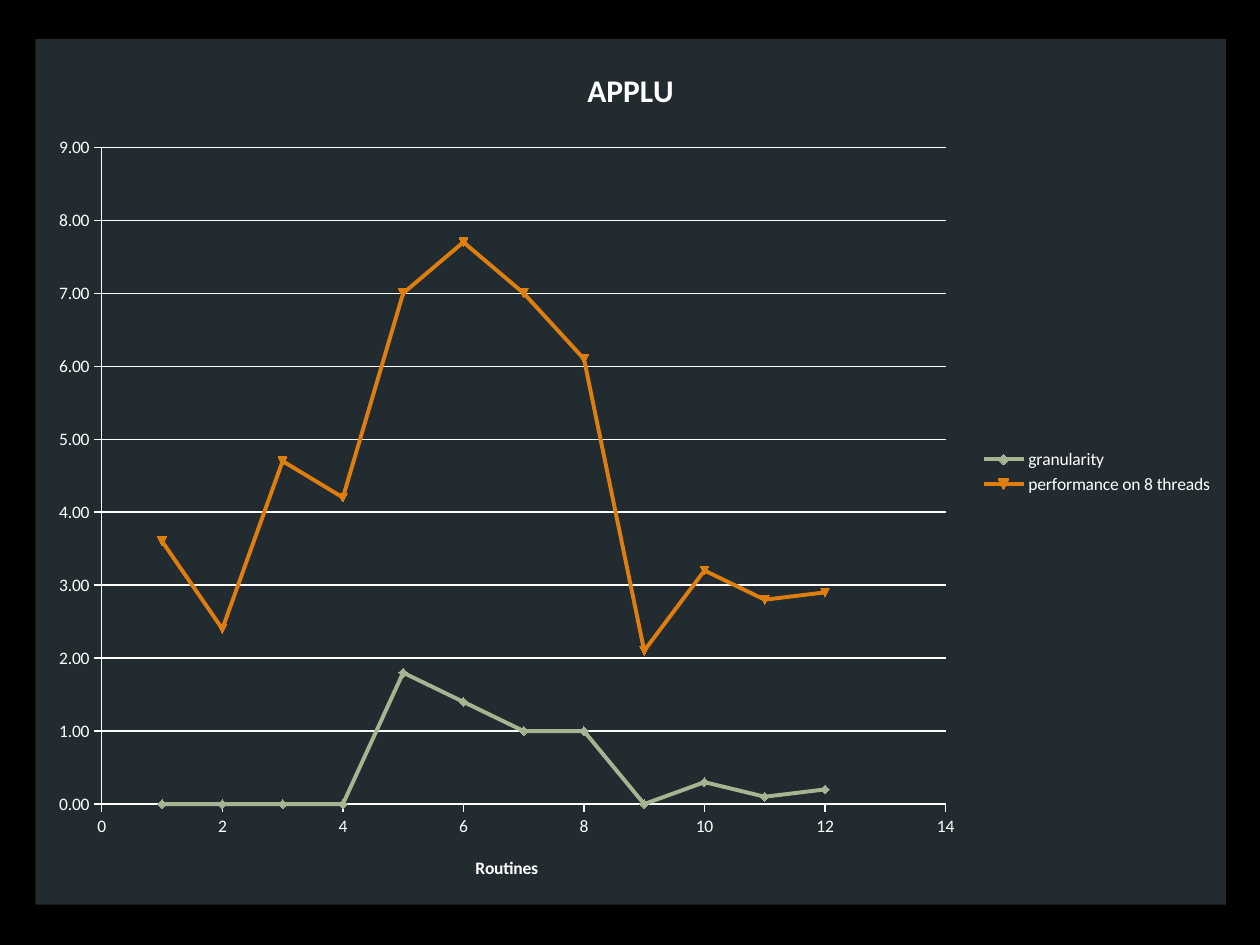
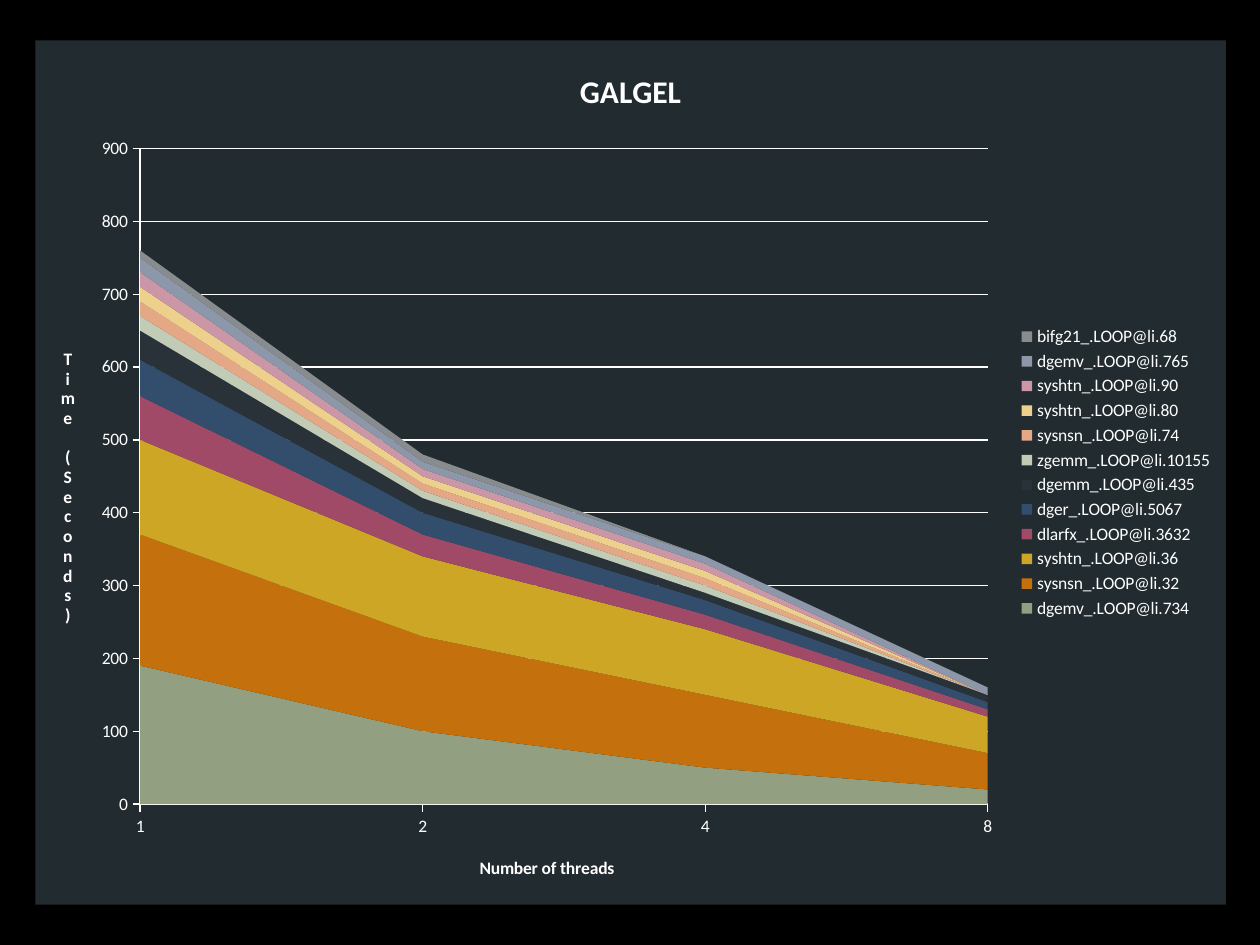
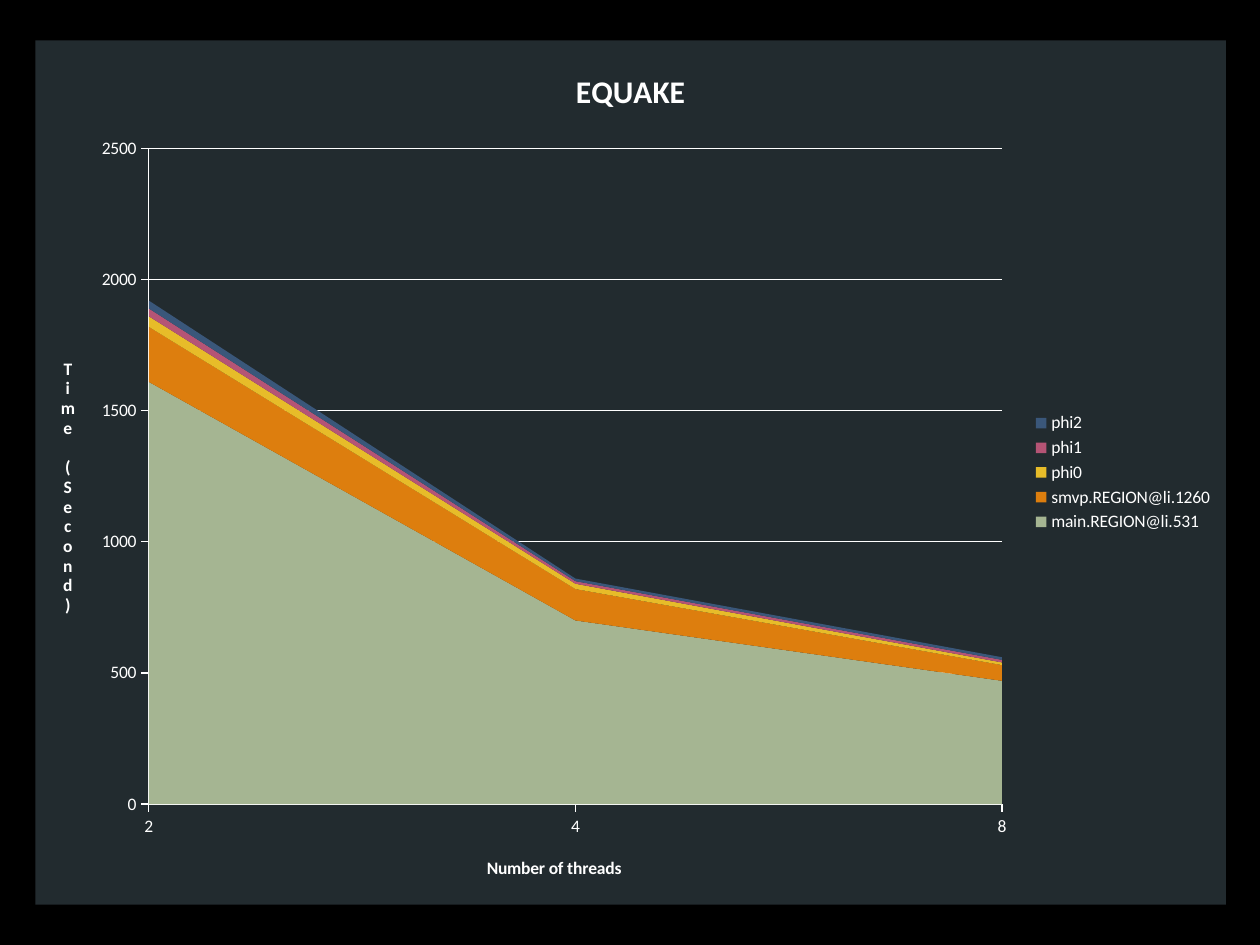
from lxml import etree
from pptx import Presentation
from pptx.chart.data import CategoryChartData, XyChartData
from pptx.dml.color import RGBColor
from pptx.enum.chart import XL_CHART_TYPE, XL_LEGEND_POSITION, XL_TICK_MARK
from pptx.oxml import parse_xml
from pptx.oxml.ns import nsdecls, qn
from pptx.util import Inches, Pt

BLACK = RGBColor(0x00, 0x00, 0x00)
WHITE = RGBColor(0xFF, 0xFF, 0xFF)
PANEL = RGBColor(0x22, 0x2B, 0x2F)
ACCENTS = [
    RGBColor(0xA5, 0xB5, 0x92),
    RGBColor(0xDD, 0x7E, 0x0E),
    RGBColor(0xE7, 0xBC, 0x29),
    RGBColor(0xB5, 0x54, 0x75),
    RGBColor(0x3A, 0x57, 0x7A),
]
DARK_ACCENTS = [
    RGBColor(0x92, 0xA0, 0x81),
    RGBColor(0xC4, 0x70, 0x0C),
    RGBColor(0xCC, 0xA6, 0x24),
    RGBColor(0xA0, 0x4A, 0x67),
    RGBColor(0x33, 0x4D, 0x6C),
    RGBColor(0x28, 0x32, 0x38),
]
LIGHT_ACCENTS = [
    RGBColor(0xC1, 0xCB, 0xB6),
    RGBColor(0xE5, 0xA8, 0x87),
    RGBColor(0xED, 0xD0, 0x8B),
    RGBColor(0xCB, 0x96, 0xA5),
    RGBColor(0x8C, 0x98, 0xA9),
    RGBColor(0x88, 0x8C, 0x8E),
]

# Measured values
APPLU = {
    "granularity": [0, 0, 0, 0, 1.8, 1.4, 1, 1, 0, 0.3, 0.1, 0.2],
    "performance on 8 threads": [3.6, 2.4, 4.7, 4.2, 7, 7.7, 7, 6.1, 2.1, 3.2, 2.8, 2.9],
}
GALGEL = {
    "dgemv_.LOOP@li.734": [190, 100, 50, 20],
    "sysnsn_.LOOP@li.32": [180, 130, 100, 50],
    "syshtn_.LOOP@li.36": [130, 110, 90, 50],
    "dlarfx_.LOOP@li.3632": [60, 30, 20, 10],
    "dger_.LOOP@li.5067": [50, 30, 20, 10],
    "dgemm_.LOOP@li.435": [40, 20, 10, 10],
    "zgemm_.LOOP@li.10155": [20, 10, 10, 0],
    "sysnsn_.LOOP@li.74": [20, 10, 10, 0],
    "syshtn_.LOOP@li.80": [20, 10, 10, 0],
    "syshtn_.LOOP@li.90": [20, 10, 10, 0],
    "dgemv_.LOOP@li.765": [20, 10, 10, 10],
    "bifg21_.LOOP@li.68": [10, 10, 0, 0],
}
EQUAKE = {
    "main.REGION@li.531": [1610, 700, 470],
    "smvp.REGION@li.1260": [210, 120, 60],
    "phi0": [40, 20, 10],
    "phi1": [30, 10, 10],
    "phi2": [30, 10, 10],
}


class ChartDeck:
    """Holds the shared chart style and the current slide."""

    font = "Calibri"
    text_size = Pt(10)
    title_size = Pt(18)
    rule_width = Pt(0.75)
    panel_bottom = Inches(7.18)

    def __init__(self):
        self.deck = Presentation()
        self.deck.slide_width = Inches(10)
        self.deck.slide_height = Inches(7.5)
        self.page = None

    def new_page(self):
        self.page = self.deck.slides.add_slide(self.deck.slide_layouts[6])
        fill = self.page.background.fill
        fill.solid()
        fill.fore_color.rgb = BLACK

    def style_font(self, font, size, bold=False):
        font.name = self.font
        font.size = size
        font.bold = bold
        font.color.rgb = WHITE

    def title(self, target, text, size):
        span = target.text_frame.paragraphs[0].add_run()
        span.text = text
        self.style_font(span.font, size, bold=True)

    def scale(self, axis, top, step):
        axis.minimum_scale, axis.maximum_scale, axis.major_unit = 0, top, step

    def axis(self, axis, name, number_format="General"):
        axis.major_tick_mark = XL_TICK_MARK.OUTSIDE
        axis.minor_tick_mark = XL_TICK_MARK.NONE
        axis.tick_labels.number_format = number_format
        axis.tick_labels.number_format_is_linked = False
        self.style_font(axis.tick_labels.font, self.text_size)
        self.rule(axis.format.line)
        if name:
            self.title(axis.axis_title, name, self.text_size)

    def rule(self, line):
        line.color.rgb = WHITE
        line.width = self.rule_width

    def stack_letters(self, axis):
        body = axis.axis_title.text_frame._txBody.find(qn("a:bodyPr"))
        body.set("rot", "0")
        body.set("vert", "wordArtVert")

    def panel(self, chart):
        properties = parse_xml(
            f'<c:spPr {nsdecls("c", "a")}><a:solidFill><a:srgbClr val="{PANEL}"/>'
            "</a:solidFill><a:ln><a:noFill/></a:ln></c:spPr>"
        )
        chart._chartSpace.find(qn("c:chart")).addnext(properties)

    def chart(self, kind, data, name, top):
        frame = self.page.shapes.add_chart(
            kind, Inches(0.28), top, Inches(9.45), self.panel_bottom - top, data
        )
        chart = frame.chart
        self.style_font(chart.font, self.text_size)
        self.panel(chart)
        chart.has_title = True
        self.title(chart.chart_title, name, self.title_size)
        chart.has_legend = True
        chart.legend.position = XL_LEGEND_POSITION.RIGHT
        chart.legend.include_in_layout = False
        self.style_font(chart.legend.font, self.text_size)
        chart.plots[0].vary_by_categories = False
        chart.category_axis.has_major_gridlines = False
        chart.value_axis.has_major_gridlines = True
        self.rule(chart.value_axis.major_gridlines.format.line)
        return chart

    def scatter_chart(self, name, table, colors):
        data = XyChartData()
        for label, values in table.items():
            series = data.add_series(label)
            for routine, value in enumerate(values, start=1):
                series.add_data_point(routine, value)
        chart = self.chart(XL_CHART_TYPE.XY_SCATTER_LINES, data, name, Inches(0.31))
        self.scale(chart.category_axis, 14, 2)
        self.axis(chart.category_axis, "Routines")
        self.scale(chart.value_axis, 9, 1)
        self.axis(chart.value_axis, None, "0.00")
        for series, color in zip(chart.plots[0].series, colors):
            series.format.line.color.rgb = color
            series.format.line.width = Pt(2.25)
            series.marker.size = 5
            series.marker.format.fill.solid()
            series.marker.format.fill.fore_color.rgb = color
            series.marker.format.line.color.rgb = color
            smooth = series._element.find(qn("c:smooth"))
            if smooth is None:
                smooth = etree.SubElement(series._element, qn("c:smooth"))
            smooth.set("val", "0")

    def area_chart(self, name, threads, table, colors, time_name, top, step):
        data = CategoryChartData()
        data.categories = threads
        for label, values in table.items():
            data.add_series(label, values)
        chart = self.chart(XL_CHART_TYPE.AREA_STACKED, data, name, Inches(0.32))
        self.axis(chart.category_axis, "Number of threads")
        self.scale(chart.value_axis, top, step)
        self.axis(chart.value_axis, time_name)
        self.stack_letters(chart.value_axis)
        for series, color in zip(chart.plots[0].series, colors):
            series.format.fill.solid()
            series.format.fill.fore_color.rgb = color
            series.format.line.fill.background()


def main():
    show = ChartDeck()

    # Granularity against speed-up
    show.new_page()
    show.scatter_chart("APPLU", APPLU, ACCENTS)

    # Time by loop
    show.new_page()
    show.area_chart("GALGEL", ["1", "2", "4", "8"], GALGEL,
                    DARK_ACCENTS + LIGHT_ACCENTS, "Time (Seconds)", 900, 100)

    # Time by region
    show.new_page()
    show.area_chart("EQUAKE", ["2", "4", "8"], EQUAKE, ACCENTS,
                    "Time (Second)", 2500, 500)

    show.deck.save("out.pptx")


if __name__ == "__main__":
    main()
